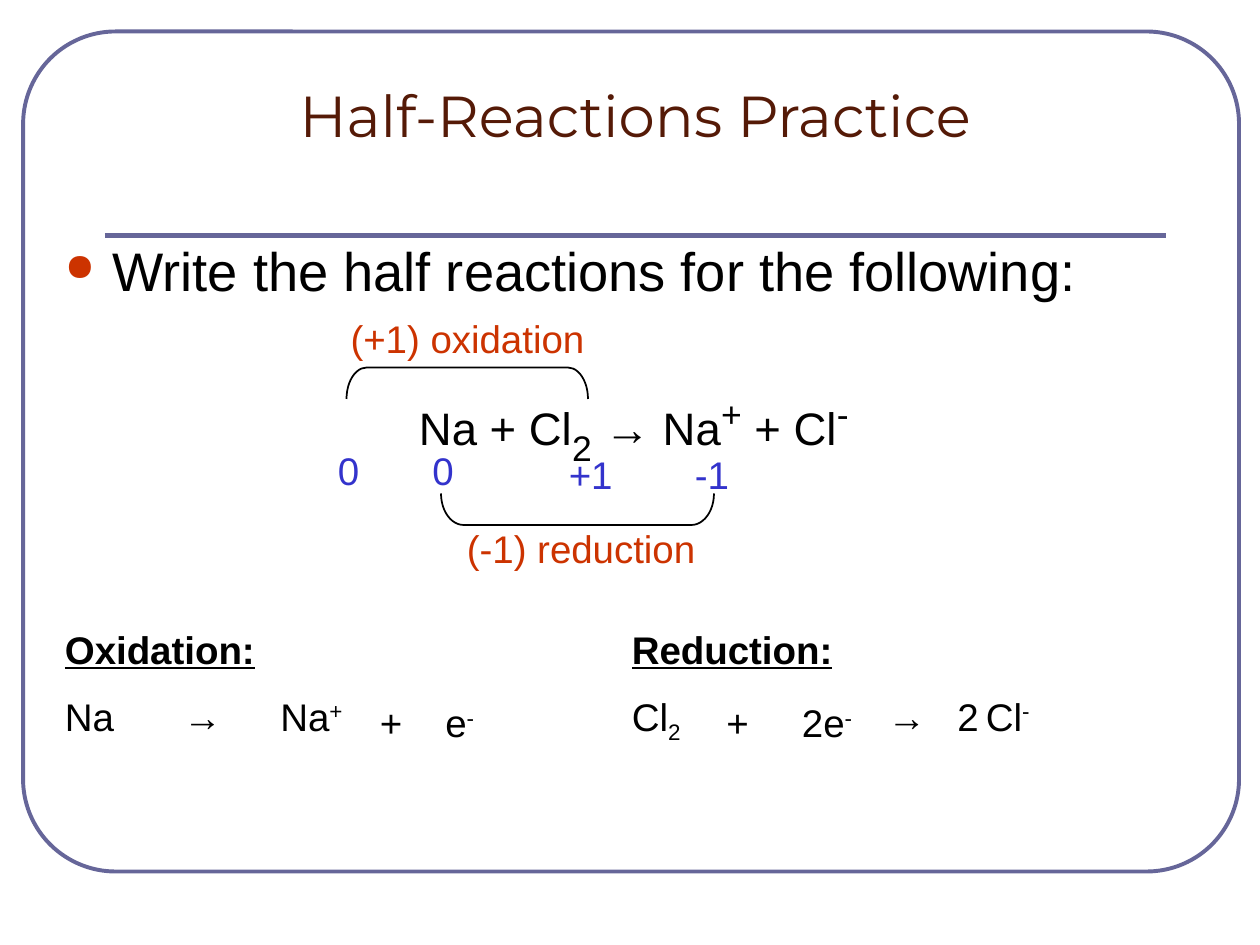
from dataclasses import dataclass

from lxml import etree
from pptx import Presentation
from pptx.dml.color import RGBColor
from pptx.enum.shapes import MSO_CONNECTOR, MSO_SHAPE
from pptx.enum.text import PP_ALIGN
from pptx.oxml.ns import qn
from pptx.util import Inches, Pt

ROUNDED, BRACKET = MSO_SHAPE.ROUNDED_RECTANGLE, MSO_SHAPE.LEFT_BRACKET
STRAIGHT = MSO_CONNECTOR.STRAIGHT
LEFT, CENTER = PP_ALIGN.LEFT, PP_ALIGN.CENTER
COLUMNS, ROWS = 120, 90


@dataclass(frozen=True)
class Theme:
    heading_font: str = "Montserrat"
    body_font: str = "Arial"
    heading: str = "551A07"
    ink: str = "000000"
    change: str = "CC3300"
    charge: str = "3333CC"
    frame: str = "666699"
    title_size: int = 33
    prompt_size: int = 31
    equation_size: int = 26
    script_size: int = 35
    label_size: int = 22
    first_gap: int = 2
    line_gap: int = 12
    equation_gap: int = 47


class SlideBuilder:
    def __init__(self, deck, theme):
        self.theme = theme
        self.slide = deck.slides.add_slide(deck.slide_layouts[6])
        self.column = deck.slide_width / COLUMNS
        self.row = deck.slide_height / ROWS

    def place(self, left, top, width, height):
        return (round(left * self.column), round(top * self.row),
                round(width * self.column), round(height * self.row))

    def outline(self, kind, box, color, weight, adjustment, rotation=0):
        shape = self.slide.shapes.add_shape(kind, *self.place(*box))
        shape.shadow.inherit = False
        shape.fill.background()
        shape.line.color.rgb = RGBColor.from_string(color)
        shape.line.width = Pt(weight)
        shape.adjustments[0] = adjustment
        shape.rotation = rotation

    def rule(self, left, right, top):
        start_x, y, length, _ = self.place(left, top, right - left, 0)
        line = self.slide.shapes.add_connector(STRAIGHT, start_x, y, start_x + length, y)
        line.line.color.rgb = RGBColor.from_string(self.theme.frame)
        line.line.width = Pt(3)
        etree.SubElement(line._element.spPr, qn("a:effectLst"))

    def frame(self, box):
        text_frame = self.slide.shapes.add_textbox(*self.place(*box)).text_frame
        text_frame.word_wrap = True
        return text_frame

    def style(self, run, size, color, font=None, bold=False):
        run.font.name = font or self.theme.body_font
        run.font.size = Pt(size)
        run.font.color.rgb = RGBColor.from_string(color)
        run.font.bold = bold

    def label(self, text, box, color, size=None, font=None, align=LEFT, gap=None):
        paragraph = self.frame(box).paragraphs[0]
        paragraph.text = text
        paragraph.alignment = align
        paragraph.space_before = Pt(self.theme.first_gap if gap is None else gap)
        self.style(paragraph.runs[0], size or self.theme.label_size, color, font)

    def formula(self, paragraph, parts, size, script_size, tabs=()):
        for text, baseline in parts:
            run = paragraph.add_run()
            run.text = text
            self.style(run, script_size if baseline else size, self.theme.ink,
                       bold=text == "→")
            if baseline:
                run.font._element.set("baseline", str(baseline * 1000))
        if tabs:
            stops = etree.SubElement(paragraph._p.get_or_add_pPr(), qn("a:tabLst"))
            for stop in tabs:
                etree.SubElement(stops, qn("a:tab"), pos=str(Inches(stop)), algn="l")

    def term(self, parts, box, tabs=()):
        paragraph = self.frame(box).paragraphs[0]
        paragraph.space_before = Pt(self.theme.first_gap)
        size = self.theme.label_size
        self.formula(paragraph, parts, size, size, tabs)

    def half_reaction(self, heading, parts, box, tabs):
        text_frame = self.frame(box)
        title = text_frame.paragraphs[0]
        title.text = heading
        title.space_before = Pt(self.theme.first_gap)
        size = self.theme.label_size
        self.style(title.runs[0], size, self.theme.ink, bold=True)
        title.runs[0].font.underline = True
        reaction = text_frame.add_paragraph()
        reaction.space_before = Pt(self.theme.line_gap)
        self.formula(reaction, parts, size, size, tabs)

    def exercise(self, prompt, equation, box):
        theme = self.theme
        text_frame = self.frame(box)
        question = text_frame.paragraphs[0]
        question.text = prompt
        question.space_before = Pt(3)
        self.style(question.runs[0], theme.prompt_size, theme.ink)
        properties = question._p.get_or_add_pPr()
        properties.set("marL", str(Inches(0.38)))
        properties.set("indent", str(Inches(-0.38)))
        color = etree.SubElement(properties, qn("a:buClr"))
        etree.SubElement(color, qn("a:srgbClr"), val=theme.change)
        etree.SubElement(properties, qn("a:buSzPct"), val="70000")
        etree.SubElement(properties, qn("a:buChar"), char="●")
        reaction = text_frame.add_paragraph()
        reaction.space_before = Pt(theme.equation_gap)
        reaction._p.get_or_add_pPr().set("marL", str(Inches(2.81)))
        self.formula(reaction, equation, theme.equation_size, theme.script_size)


def main():
    deck = Presentation()
    deck.slide_width, deck.slide_height = Inches(10), Inches(7.5)
    theme = Theme()
    page = SlideBuilder(deck, theme)

    page.outline(ROUNDED, (2.2, 3, 115.8, 80), theme.frame, 2.25, 0.11)
    page.rule(10, 111, 22.4)
    page.label("Half-Reactions Practice", (10, 7, 101, 7.8), theme.heading,
               theme.title_size, theme.heading_font, CENTER, gap=0)
    page.exercise(
        "Write the half reactions for the following:",
        [("Na + Cl", 0), ("2", -25), (" ", 0), ("→", 0), (" Na", 0),
         ("+", 30), (" + Cl", 0), ("-", 30)],
        (5, 22, 112, 27))

    for charge, left, top in (("0", 31, 42), ("0", 40, 42),
                              ("+1", 53, 42.4), ("-1", 65, 42.4)):
        page.label(charge, (left, top, 7, 5.6), theme.charge)

    page.outline(BRACKET, (43, 25, 3, 23), theme.ink, 1, 0.64, 90)
    page.label("(+1) oxidation", (32.2, 29.4, 24.8, 5.6), theme.change)
    page.outline(BRACKET, (53.5, 35.5, 3, 26), theme.ink, 1, 0.72, 270)
    page.label("(-1) reduction", (40.7, 49.4, 29.3, 5.6), theme.change, align=CENTER)

    page.half_reaction("Oxidation:", [("Na\t→\tNa", 0), ("+", 30)],
                       (5, 59, 39, 12.2), (0.94, 1.71))
    page.term([("+\te", 0), ("-", 30)], (35, 66, 12, 5.6), (0.52,))
    page.half_reaction("Reduction:", [("Cl", 0), ("2", -25), ("\t→\tCl", 0), ("-", 30)],
                       (59, 59, 51, 12.2), (2.03, 2.81))
    page.term([("2", 0)], (90, 65.4, 6, 5.6))
    page.term([("+\t2e", 0), ("-", 30)], (68, 66, 16, 5.6), (0.6,))

    deck.save("out.pptx")


if __name__ == "__main__":
    main()
